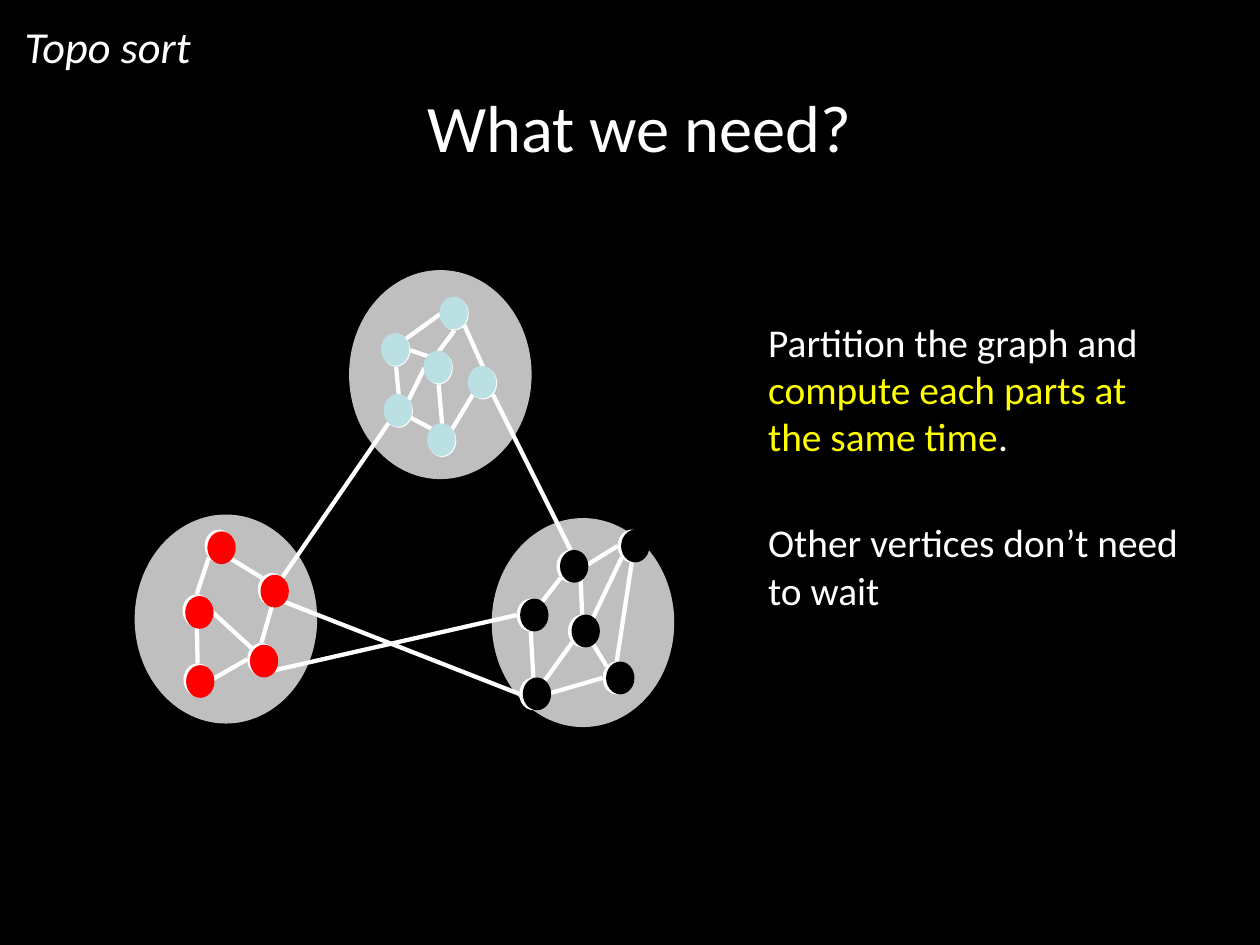
from dataclasses import dataclass
from math import sqrt

from lxml.etree import SubElement
from pptx import Presentation
from pptx.dml.color import RGBColor
from pptx.enum.shapes import MSO_CONNECTOR as Connector, MSO_SHAPE as Shape
from pptx.enum.text import MSO_ANCHOR as Anchor, PP_ALIGN as Align
from pptx.oxml.ns import qn
from pptx.util import Inches, Pt


@dataclass(frozen=True)
class Theme:
    font: str = "Calibri"
    black: str = "000000"
    white: str = "FFFFFF"
    yellow: str = "FFFF00"
    gray: str = "BFBFBF"
    pale: str = "BBE0E3"
    red: str = "FF0000"
    title_size: int = 54
    topic_size: int = 36
    body_size: int = 32
    edge_width: float = 3.5


THEME = Theme()
REGION_SIZE = (2.06, 2.36)
VERTEX_SIZE = (0.32, 0.37)
REGIONS = [(5.55, 5.85), (1.52, 5.81), (3.94, 3.05)]

# Each part: colour, shift of the coloured dot from its white vertex, vertices
PARTS = [
    (THEME.pale, (-0.01, -0.01), {
        "p_mid": (4.79, 3.97), "p_low": (4.34, 4.46), "p_bottom": (4.83, 4.79),
        "p_right": (5.29, 4.14), "p_left": (4.31, 3.77), "p_top": (4.97, 3.36)}),
    (THEME.red, (0.03, 0.02), {
        "r_right": (2.91, 6.47), "r_left": (2.06, 6.71), "r_top": (2.31, 5.98),
        "r_low": (2.79, 7.26), "r_bottom": (2.07, 7.49)}),
    (THEME.black, (0.04, 0), {
        "b_top": (6.28, 6.21), "b_left": (5.83, 6.76), "b_mid": (6.41, 6.94),
        "b_right": (6.97, 5.98), "b_bottom": (5.86, 7.65), "b_low": (6.8, 7.47)}),
]
VERTICES = {name: place for _, _, part in PARTS for name, place in part.items()}

# Each edge: vertex and compass point at both ends ("C" is the centre)
EDGES = [
    ("p_low", "N", "p_left", "S"), ("p_low", "C", "p_bottom", "NW"),
    ("p_bottom", "NE", "p_right", "SW"), ("p_right", "N", "p_top", "SE"),
    ("p_mid", "N", "p_top", "S"), ("p_left", "NE", "p_top", "W"),
    ("p_bottom", "N", "p_mid", "S"), ("p_mid", "W", "p_low", "NE"),
    ("p_left", "E", "p_mid", "NW"),
    ("r_top", "SW", "r_left", "N"), ("r_top", "SE", "r_right", "NW"),
    ("r_left", "C", "r_bottom", "N"), ("r_bottom", "E", "r_low", "W"),
    ("r_low", "N", "r_right", "S"), ("r_left", "E", "r_low", "NW"),
    ("b_top", "SW", "b_left", "NE"), ("b_left", "S", "b_bottom", "N"),
    ("b_bottom", "NE", "b_mid", "SW"), ("b_mid", "NE", "b_right", "SW"),
    ("b_top", "E", "b_right", "W"), ("b_mid", "N", "b_top", "SE"),
    ("b_bottom", "E", "b_low", "W"), ("b_right", "S", "b_low", "N"),
    ("b_mid", "SE", "b_low", "NW"),
    ("r_right", "NE", "p_low", "SW"), ("p_right", "SE", "b_top", "N"),
    ("r_low", "SE", "b_left", "W"), ("r_right", "SE", "b_bottom", "W"),
]


def rim_point(vertex, compass):
    """Return the point of a vertex's outline that lies in a compass direction."""
    left, top = VERTICES[vertex]
    width, height = VERTEX_SIZE
    across = ("E" in compass) - ("W" in compass)
    down = ("S" in compass) - ("N" in compass)
    reach = 0.5 / sqrt(max(1, across ** 2 + down ** 2))
    return left + width * (0.5 + reach * across), top + height * (0.5 + reach * down)


class SlidePainter:
    def __init__(self, slide, theme):
        self.slide = slide
        self.theme = theme

    def background(self, color):
        fill = self.slide.background.fill
        fill.solid()
        fill.fore_color.rgb = RGBColor.from_string(color)

    def ellipse(self, place, size, color):
        shape = self.slide.shapes.add_shape(Shape.OVAL, *map(Inches, (*place, *size)))
        shape.shadow.inherit = False
        shape.fill.solid()
        shape.fill.fore_color.rgb = RGBColor.from_string(color)
        shape.line.fill.background()

    def edge(self, start, end):
        line = self.slide.shapes.add_connector(
            Connector.STRAIGHT, *map(Inches, (*start, *end)))
        line.line.width = Pt(self.theme.edge_width)
        line.line.color.rgb = RGBColor.from_string(self.theme.white)
        SubElement(line._element.spPr, qn("a:effectLst"))

    def text(self, place, paragraphs, size, insets, align=Align.LEFT, gap=0, italic=False):
        """Add a box; each paragraph is a list of (words, colour) pairs."""
        box = self.slide.shapes.add_textbox(*map(Inches, place))
        frame = box.text_frame
        left, top, right, bottom = map(Inches, insets)
        frame_format = {
            "word_wrap": True, "vertical_anchor": Anchor.MIDDLE,
            "margin_left": left, "margin_top": top,
            "margin_right": right, "margin_bottom": bottom}
        for name, value in frame_format.items():
            setattr(frame, name, value)
        font_format = {"name": self.theme.font, "size": Pt(size), "italic": italic}
        for index, pieces in enumerate(paragraphs):
            para = frame.add_paragraph() if index else frame.paragraphs[0]
            para.alignment = align
            para.space_before = Pt(gap if index else 0)
            for words, color in pieces:
                span = para.add_run()
                span.text = words
                for name, value in font_format.items():
                    setattr(span.font, name, value)
                span.font.color.rgb = RGBColor.from_string(color)


def main():
    deck = Presentation()
    deck.slide_width, deck.slide_height = Inches(14.22), Inches(10.67)
    painter = SlidePainter(deck.slides.add_slide(deck.slide_layouts[6]), THEME)
    white = THEME.white
    indented = (0.41, 0.06, 0.06, 0.06)

    painter.background(THEME.black)
    painter.text((0.73, 0.52, 12.63, 1.8), [[("What we need?", white)]],
                 THEME.title_size, indented, align=Align.CENTER)
    painter.text((0.18, 0.02, 9.01, 1), [[("Topo sort", white)]],
                 THEME.topic_size, (0.1, 0.05, 0.1, 0.05), italic=True)
    painter.text((8.26, 3.77, 5.14, 2.97), [
        [("Partition the graph and ", white),
         ("compute each parts at the same time", THEME.yellow), (".", white)],
        [("Other vertices don’t need to wait", white)],
    ], THEME.body_size, indented, gap=48)

    for place in REGIONS:
        painter.ellipse(place, REGION_SIZE, THEME.gray)
    for place in VERTICES.values():
        painter.ellipse(place, VERTEX_SIZE, white)
    for start, start_side, end, end_side in EDGES:
        painter.edge(rim_point(start, start_side), rim_point(end, end_side))
    for color, (shift_x, shift_y), part in PARTS:
        for left, top in part.values():
            painter.ellipse((left + shift_x, top + shift_y), VERTEX_SIZE, color)

    deck.save("out.pptx")


if __name__ == "__main__":
    main()
